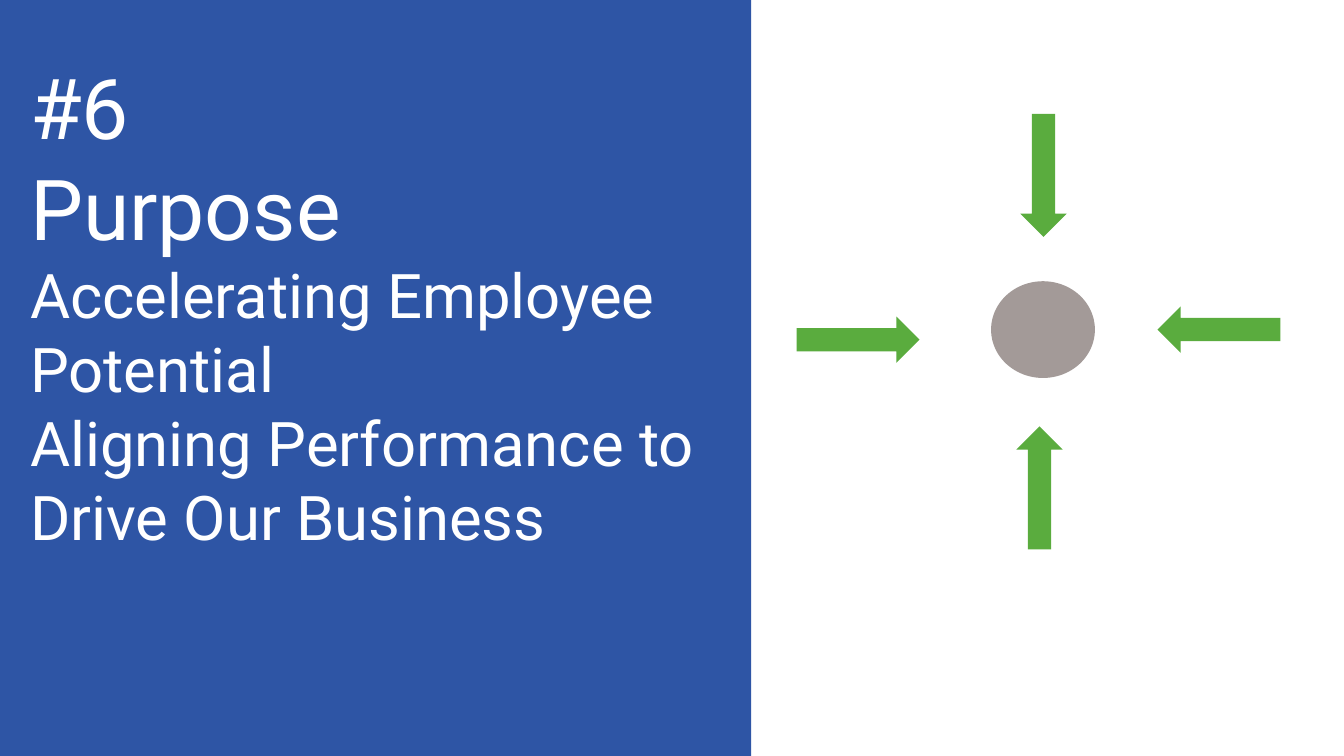
from dataclasses import dataclass

from pptx import Presentation
from pptx.dml.color import RGBColor as Rgb
from pptx.enum.shapes import MSO_SHAPE as Kind
from pptx.util import Inches, Pt


@dataclass(frozen=True)
class Theme:
    font: str = "Roboto"
    blue: str = "2E55A5"
    green: str = "5AAC3E"
    grey: str = "A39A98"
    white: str = "FFFFFF"
    head: int = 60
    body: int = 44


class Page:
    """Places elements on a grid of one-inch columns and rows."""

    def __init__(self, deck, theme):
        self.theme = theme
        self.slide = deck.slides.add_slide(deck.slide_layouts[6])

    def grid(self, *cells):
        return [Inches(cell) for cell in cells]

    def shape(self, kind, cells, color, turn=0):
        item = self.slide.shapes.add_shape(kind, *self.grid(*cells))
        item.shadow.inherit = False
        item.fill.solid()
        item.fill.fore_color.rgb = Rgb.from_string(color)
        item.line.fill.background()
        item.rotation = turn

    def arrow(self, left, top, turn):
        self.shape(Kind.LEFT_ARROW, (left, top, 1.22, 0.46), self.theme.green, turn)

    def text(self, cells, lines):
        frame = self.slide.shapes.add_textbox(*self.grid(*cells)).text_frame
        frame.word_wrap = True
        for i, (words, size) in enumerate(lines):
            para = frame.add_paragraph() if i else frame.paragraphs[0]
            para.text = words
            para.font.name = self.theme.font
            para.font.size = Pt(size)
            para.font.color.rgb = Rgb.from_string(self.theme.white)


def main():
    deck = Presentation()
    deck.slide_width, deck.slide_height = Inches(13.33), Inches(7.5)
    theme = Theme()
    page = Page(deck, theme)

    # Blue panel with the message
    page.shape(Kind.RECTANGLE, (0, 0, 7.45, 7.5), theme.blue)
    body = (
        "Accelerating Employee",
        "Potential",
        "Aligning Performance to",
        "Drive Our Business",
    )
    lines = [("#6\vPurpose", theme.head)] + [(words, theme.body) for words in body]
    page.text((0.2, 0.5, 7.99, 5.08), lines)

    # Four arrows pointing at the centre
    for left, top, turn in (
        (7.9, 3.14, 180),
        (9.7, 4.61, 90),
        (11.48, 3.04, 0),
        (9.74, 1.51, 270),
    ):
        page.arrow(left, top, turn)
    page.shape(Kind.OVAL, (9.83, 2.79, 1.03, 0.96), theme.grey)

    deck.save("out.pptx")


if __name__ == "__main__":
    main()
